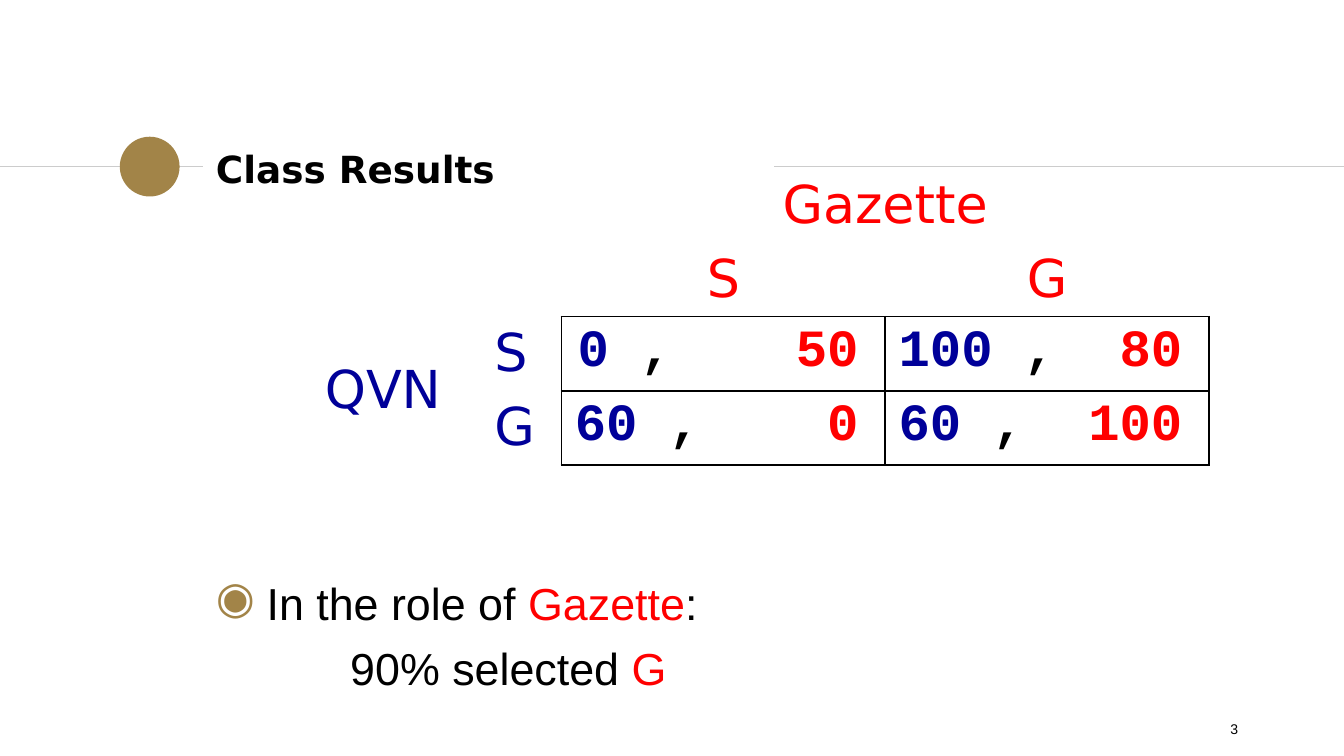
from dataclasses import dataclass

from lxml.etree import SubElement
from pptx import Presentation
from pptx.dml.color import RGBColor
from pptx.enum.shapes import MSO_CONNECTOR, MSO_SHAPE
from pptx.enum.text import MSO_ANCHOR, PP_ALIGN
from pptx.oxml.ns import qn
from pptx.util import Cm, Pt


@dataclass(frozen=True)
class Theme:
    black: str = "000000"
    red: str = "FF0000"
    blue: str = "000099"
    gold: str = "A28448"
    rule: str = "CCCCCC"
    heading_font: str = "DejaVu Sans"
    body_font: str = "Arial"
    payoff_font: str = "Courier New"
    title_size: float = 20
    table_size: float = 28
    body_size: float = 24
    number_size: float = 7.5
    inset: float = 0.25
    no_table_style: str = "{2D5ABB26-0587-4C30-8999-92F81FD0307C}"


class SlideBuilder:
    def __init__(self, slide, theme):
        self.slide = slide
        self.theme = theme

    def style(self, font, name, size, color, bold=False):
        font.name, font.size, font.bold = name, Pt(size), bold
        font.color.rgb = RGBColor.from_string(color)

    def add_runs(self, paragraph, runs, name, size, bold=False):
        for text, color in runs:
            run = paragraph.add_run()
            run.text = text
            self.style(run.font, name, size, color, bold)

    def frame(self, shape, anchor, bottom=None):
        text_frame = shape.text_frame
        text_frame.word_wrap = True
        text_frame.vertical_anchor = anchor
        inset = self.theme.inset
        text_frame.margin_left = text_frame.margin_right = Cm(inset)
        text_frame.margin_top = Cm(inset)
        text_frame.margin_bottom = Cm(inset if bottom is None else bottom)
        return text_frame

    def title(self, text, left, top, width, height):
        shape = self.slide.shapes.title
        shape.left, shape.top = Cm(left), Cm(top)
        shape.width, shape.height = Cm(width), Cm(height)
        paragraph = self.frame(shape, MSO_ANCHOR.MIDDLE).paragraphs[0]
        paragraph.alignment = PP_ALIGN.LEFT
        theme = self.theme
        self.add_runs(paragraph, [(text, theme.black)], theme.heading_font, theme.title_size, True)

    def rule(self, start, end, y):
        line = self.slide.shapes.add_connector(
            MSO_CONNECTOR.STRAIGHT, Cm(start), Cm(y), Cm(end), Cm(y))
        line.line.color.rgb = RGBColor.from_string(self.theme.rule)
        line.line.width = Pt(0.75)
        SubElement(line._element.spPr, qn("a:effectLst"))

    def dot(self, center_x, center_y, diameter):
        shape = self.slide.shapes.add_shape(
            MSO_SHAPE.OVAL, Cm(center_x - diameter / 2), Cm(center_y - diameter / 2),
            Cm(diameter), Cm(diameter))
        shape.shadow.inherit = False
        shape.fill.solid()
        shape.fill.fore_color.rgb = RGBColor.from_string(self.theme.gold)
        shape.line.fill.background()

    def table(self, left, top, columns, row_height, row_count):
        shape = self.slide.shapes.add_table(
            row_count, len(columns), Cm(left), Cm(top),
            Cm(sum(columns)), Cm(row_height * row_count))
        table = shape.table
        table.first_row = table.horz_banding = False
        table._tbl.tblPr.find(qn("a:tableStyleId")).text = self.theme.no_table_style
        for column, width in zip(table.columns, columns):
            column.width = Cm(width)
        for row in table.rows:
            row.height = Cm(row_height)
        for cell in table.iter_cells():
            cell.fill.background()
        return table

    def label(self, cell, text, color, alignment=PP_ALIGN.CENTER):
        cell.vertical_anchor = MSO_ANCHOR.MIDDLE
        paragraph = cell.text_frame.paragraphs[0]
        paragraph.alignment = alignment
        self.add_runs(paragraph, [(text, color)], self.theme.heading_font, self.theme.table_size)

    def payoff(self, cell, row_value, column_value):
        theme = self.theme
        paragraph = cell.text_frame.paragraphs[0]
        runs = [(f"\t{row_value}", theme.blue), (" ,", theme.black),
                (f"\t{column_value}", theme.red)]
        self.add_runs(paragraph, runs, theme.payoff_font, theme.table_size, True)
        # Right tab stops line up both numbers
        tabs = SubElement(paragraph._p.get_or_add_pPr(), qn("a:tabLst"))
        for position in (1.83, 5.36):
            SubElement(tabs, qn("a:tab"), pos=str(Cm(position)), algn="r")
        # Cell borders stand before the fill
        properties = cell._tc.get_or_add_tcPr()
        for index, side in enumerate(("lnL", "lnR", "lnT", "lnB")):
            border = SubElement(properties, qn(f"a:{side}"), w=str(Pt(1)))
            fill = SubElement(border, qn("a:solidFill"))
            SubElement(fill, qn("a:srgbClr"), val=theme.black)
            properties.insert(index, border)

    def text_box(self, left, top, width, height, anchor, bottom=None):
        shape = self.slide.shapes.add_textbox(Cm(left), Cm(top), Cm(width), Cm(height))
        return self.frame(shape, anchor, bottom)

    def body_line(self, paragraph, runs, margin, bullet=None):
        theme = self.theme
        paragraph.space_before = Pt(6)
        self.add_runs(paragraph, runs, theme.body_font, theme.body_size)
        properties = paragraph._p.get_or_add_pPr()
        properties.set("marL", str(Cm(margin)))
        if bullet:
            properties.set("indent", str(-Cm(margin)))
            color = SubElement(properties, qn("a:buClr"))
            SubElement(color, qn("a:srgbClr"), val=theme.gold)
            SubElement(properties, qn("a:buChar"), char=bullet)

    def slide_number(self, text, left, top, width, height):
        theme = self.theme
        paragraph = self.text_box(left, top, width, height, MSO_ANCHOR.MIDDLE).paragraphs[0]
        paragraph.alignment = PP_ALIGN.RIGHT
        self.add_runs(paragraph, [(text, theme.black)], theme.body_font, theme.number_size)


def main():
    theme = Theme()
    presentation = Presentation()
    presentation.slide_width, presentation.slide_height = Cm(25.4), Cm(14.29)
    slide = presentation.slides.add_slide(presentation.slide_layouts[5])
    builder = SlideBuilder(slide, theme)
    row_player, column_player = "QVN", "Gazette"
    strategies = ("S", "G")

    # Heading with its rules and dot
    builder.rule(0, 3.83, 3.15)
    builder.dot(2.83, 3.15, 1.13)
    builder.rule(14.63, 25.4, 3.15)
    builder.title("Class Results", 3.83, 2.57, 10.77, 1.22)

    # Payoff table
    table = builder.table(5.38, 3.18, (3.71, 1.52, 6.12, 6.12), 1.4, 4)
    table.cell(0, 2).merge(table.cell(0, 3))
    table.cell(2, 0).merge(table.cell(3, 0))
    builder.label(table.cell(0, 2), column_player, theme.red)
    builder.label(table.cell(2, 0), row_player, theme.blue)
    payoffs = (((0, 50), (100, 80)), ((60, 0), (60, 100)))
    for index, strategy in enumerate(strategies):
        builder.label(table.cell(1, index + 2), strategy, theme.red)
        builder.label(table.cell(index + 2, 1), strategy, theme.blue, PP_ALIGN.LEFT)
        for column, values in enumerate(payoffs[index]):
            builder.payoff(table.cell(index + 2, column + 2), *values)

    # Findings, resting on the bottom of the text area
    findings = builder.text_box(3.83, 4.5, 18.92, 8.63, MSO_ANCHOR.BOTTOM, bottom=0)
    builder.body_line(
        findings.paragraphs[0],
        [("In the role of ", theme.black), (column_player, theme.red), (":", theme.black)],
        0.96, bullet="◉")
    builder.body_line(
        findings.add_paragraph(), [("90% selected ", theme.black), ("G", theme.red)], 2.54)

    # Slide number
    builder.slide_number("3", 17.93, 13.39, 5.72, 0.76)

    presentation.save("out.pptx")


if __name__ == "__main__":
    main()
